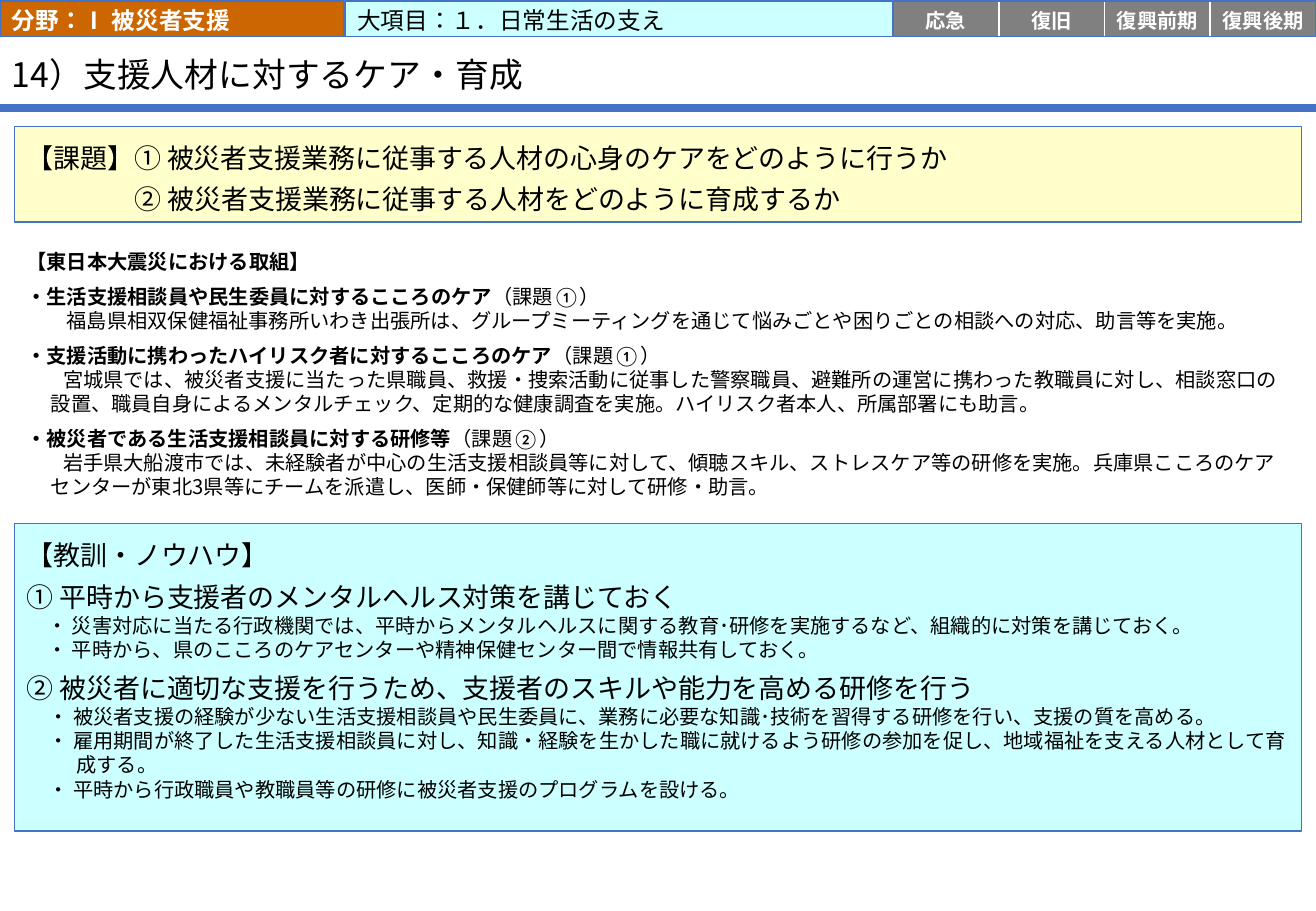
from pptx import Presentation
from pptx.dml.color import RGBColor
from pptx.enum.lang import MSO_LANGUAGE_ID
from pptx.enum.shapes import MSO_CONNECTOR, MSO_SHAPE
from pptx.enum.text import MSO_ANCHOR, PP_ALIGN
from pptx.oxml.ns import qn
from pptx.util import Inches, Pt
from lxml.etree import SubElement

SANS = "Noto Sans CJK JP"
CALIBRI = "Calibri"
BLUE, CYAN, YELLOW = "4472C4", "CCFFFF", "FFFFCC"
ORANGE, GRAY, WHITE, BLACK = "CC6600", "808080", "FFFFFF", "000000"
LEFT, WIDTH = 0.12, 10.59
BAR_TOP, BAR_HEIGHT = 0.01, 0.29
PHASE_LEFT, PHASE_WIDTH = 7.35, 0.87
PHASES = ["応急", "復旧", "復興前期", "復興後期"]

EFFORTS = [
    ("・生活支援相談員や民生委員に対するこころのケア", "（課題①）", 0.13,
     "福島県相双保健福祉事務所いわき出張所は、グループミーティングを通じて悩みごとや困りごとの相談への対応、助言等を実施。"),
    ("・支援活動に携わったハイリスク者に対するこころのケア", "（課題①）", 0.1,
     "宮城県では、被災者支援に当たった県職員、救援・捜索活動に従事した警察職員、避難所の運営に携わった教職員に対し、"
     "相談窓口の設置、職員自身によるメンタルチェック、定期的な健康調査を実施。ハイリスク者本人、所属部署にも助言。"),
    ("・被災者である生活支援相談員に対する研修等", "（課題②）", 0.1,
     "岩手県大船渡市では、未経験者が中心の生活支援相談員等に対して、傾聴スキル、ストレスケア等の研修を実施。"
     "兵庫県こころのケアセンターが東北3県等にチームを派遣し、医師・保健師等に対して研修・助言。"),
]

LESSONS = [
    ("① 平時から支援者のメンタルヘルス対策を講じておく", -0.24, [
        "・ 災害対応に当たる行政機関では、平時からメンタルヘルスに関する教育･研修を実施するなど、組織的に対策を講じておく。",
        "・ 平時から、県のこころのケアセンターや精神保健センター間で情報共有しておく。",
    ]),
    ("② 被災者に適切な支援を行うため、支援者のスキルや能力を高める研修を行う", -0.23, [
        "・ 被災者支援の経験が少ない生活支援相談員や民生委員に、業務に必要な知識･技術を習得する研修を行い、支援の質を高める。",
        "・ 雇用期間が終了した生活支援相談員に対し、知識・経験を生かした職に就けるよう研修の参加を促し、"
        "地域福祉を支える人材として育成する。",
        "・ 平時から行政職員や教職員等の研修に被災者支援のプログラムを設ける。",
    ]),
]


def color(value):
    return RGBColor.from_string(value)


def span(text, size=12, font=SANS, ink=BLACK, bold=False):
    return {"text": text, "size": size, "font": font, "ink": ink, "bold": bold}


def para(*spans, before=0, margin=0, indent=0, spacing=None, align=PP_ALIGN.LEFT):
    return {"spans": spans, "before": before, "margin": margin,
            "indent": indent, "spacing": spacing, "align": align}


class SlideBuilder:
    """Draws styled boxes, text and lines on one slide."""

    def __init__(self, page):
        self.page = page

    def add_paras(self, box, paras, anchor, insets):
        frame = box.text_frame
        frame.word_wrap = True
        frame.vertical_anchor = anchor
        (frame.margin_left, frame.margin_top,
         frame.margin_right, frame.margin_bottom) = map(Inches, insets)
        for index, item in enumerate(paras):
            paragraph = frame.add_paragraph() if index else frame.paragraphs[0]
            paragraph.alignment = item["align"]
            paragraph.space_before = Pt(item["before"])
            if item["spacing"]:
                paragraph.line_spacing = item["spacing"]
            properties = paragraph._p.get_or_add_pPr()
            properties.set("marL", str(Inches(item["margin"])))
            properties.set("indent", str(Inches(item["indent"])))
            for part in item["spans"]:
                self.add_span(paragraph, part)

    def add_span(self, paragraph, part):
        run = paragraph.add_run()
        run.text = part["text"]
        font = run.font
        font.size = Pt(part["size"])
        font.bold = part["bold"]
        font.color.rgb = color(part["ink"])
        font.name = part["font"]
        font.language_id = MSO_LANGUAGE_ID.JAPANESE
        east_asian = SubElement(run._r.get_or_add_rPr(), qn("a:ea"))
        east_asian.set("typeface", part["font"])

    def box(self, left, top, width, height, paras=(), fill=None, line=None,
            anchor=MSO_ANCHOR.MIDDLE, insets=(0.1, 0.05, 0.1, 0.05)):
        shape = self.page.shapes.add_shape(
            MSO_SHAPE.RECTANGLE, Inches(left), Inches(top), Inches(width), Inches(height))
        shape.shadow.inherit = False
        if fill:
            shape.fill.solid()
            shape.fill.fore_color.rgb = color(fill)
        else:
            shape.fill.background()
        if line:
            shape.line.color.rgb = color(line)
            shape.line.width = Pt(1)
        else:
            shape.line.fill.background()
        self.add_paras(shape, paras, anchor, insets)

    def text(self, left, top, width, height, paras, insets):
        box = self.page.shapes.add_textbox(
            Inches(left), Inches(top), Inches(width), Inches(height))
        self.add_paras(box, paras, MSO_ANCHOR.MIDDLE, insets)

    def rule(self, left, top, right, width):
        line = self.page.shapes.add_connector(
            MSO_CONNECTOR.STRAIGHT, Inches(left), Inches(top), Inches(right), Inches(top))
        line.line.color.rgb = color(BLUE)
        line.line.width = Pt(width)
        SubElement(line._element.spPr, qn("a:effectLst"))


def effort_paras():
    paras = [para(span("【東日本大震災における取組】", font=CALIBRI, bold=True))]
    for heading, issue, indent, detail in EFFORTS:
        paras.append(para(span(heading, font=CALIBRI, bold=True),
                          span(issue, font=CALIBRI), before=6))
        paras.append(para(span(detail), margin=0.2, indent=indent))
    return paras


def lesson_paras():
    paras = [para(span("【教訓・ノウハウ】", size=16))]
    for heading, indent, points in LESSONS:
        paras.append(para(span(heading, size=16), before=6))
        paras += [para(span(point), margin=0.41, indent=indent) for point in points]
    return paras


def main():
    deck = Presentation()
    deck.slide_width, deck.slide_height = Inches(10.83), Inches(7.5)
    slide = SlideBuilder(deck.slides.add_slide(deck.slide_layouts[6]))

    slide.rule(0, 0.89, 10.83, 4.5)
    slide.box(LEFT, 1.87, WIDTH, 2.42, effort_paras(), fill=WHITE)
    slide.text(0, 0.32, 9.48, 0.58,
               [para(span("14）支援人材に対するケア・育成", size=20), spacing=0.9)],
               insets=(0.1, 0.04, 0.1, 0))

    bar_insets = (0.1, 0.02, 0.1, 0)
    slide.box(0, BAR_TOP, 2.83, BAR_HEIGHT,
              [para(span("分野：Ⅰ 被災者支援", size=14, font=CALIBRI, ink=WHITE, bold=True))],
              fill=ORANGE, line=BLUE, insets=bar_insets)
    slide.box(2.84, BAR_TOP, 4.53, BAR_HEIGHT,
              [para(span("大項目：１．日常生活の支え", size=14, font=CALIBRI))],
              fill=CYAN, line=BLUE, insets=bar_insets)

    issues = [("【課題】① 被災者支援業務に従事する人材の心身のケアをどのように行うか", 0),
              ("② 被災者支援業務に従事する人材をどのように育成するか", 0.89)]
    slide.box(LEFT, 1.04, WIDTH, 0.79,
              [para(span(issue, size=16), margin=margin, spacing=Pt(24))
               for issue, margin in issues],
              fill=YELLOW, line=BLUE, insets=(0.1, 0.12, 0.1, 0.12))
    slide.box(LEFT, 4.31, WIDTH, 2.53, lesson_paras(), fill=CYAN, line=BLUE,
              anchor=MSO_ANCHOR.TOP, insets=(0.1, 0.12, 0.1, 0))

    for index, phase in enumerate(PHASES):
        slide.box(PHASE_LEFT + index * PHASE_WIDTH, BAR_TOP, PHASE_WIDTH, BAR_HEIGHT,
                  [para(span(phase, font=CALIBRI, ink=WHITE, bold=True),
                        align=PP_ALIGN.CENTER)],
                  fill=GRAY, line=WHITE, insets=(0, 0.02, 0, 0))
    slide.box(PHASE_LEFT, BAR_TOP, PHASE_WIDTH * len(PHASES), BAR_HEIGHT, line=BLUE)

    deck.save("out.pptx")


if __name__ == "__main__":
    main()
